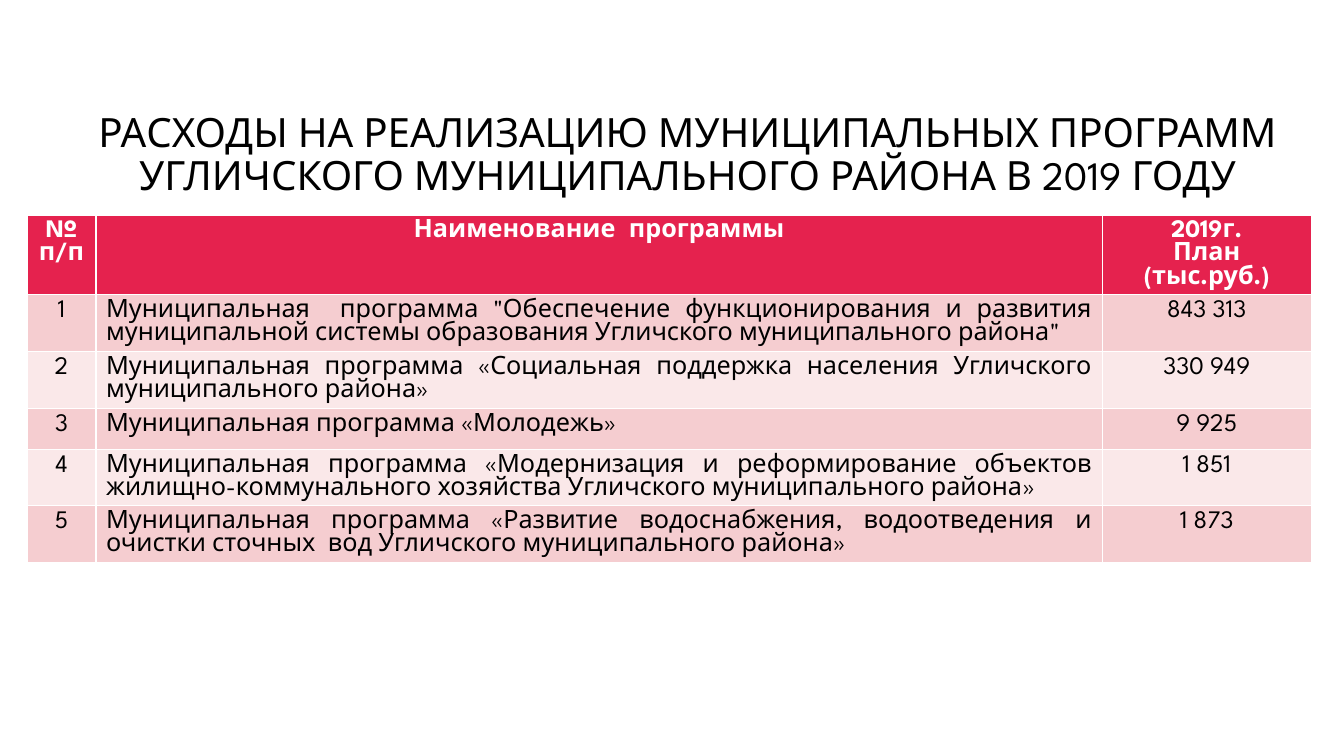
import pptx
import pptx.util
import pptx.dml.color
import pptx.enum.text

ALIGN = pptx.enum.text.PP_ALIGN
ANCHOR = pptx.enum.text.MSO_ANCHOR
COLORS = {"black": "000000", "white": "FFFFFF", "header": "E5224E",
          "odd": "F5CDD0", "even": "FAE8E9"}
HEADER = ["№ п/п", "Наименование  программы", "2019г.\nПлан\n(тыс.руб.)"]
PROGRAMS = [
    ('Муниципальная  программа "Обеспечение функционирования и развития '
     'муниципальной системы образования Угличского муниципального района"', "843 313"),
    ("Муниципальная программа «Социальная поддержка населения Угличского "
     "муниципального района»", "330 949"),
    ("Муниципальная программа «Молодежь»", "9 925"),
    ("Муниципальная программа «Модернизация и реформирование объектов "
     "жилищно-коммунального хозяйства Угличского муниципального района»", "1 851"),
    ("Муниципальная программа «Развитие водоснабжения, водоотведения и "
     "очистки сточных  вод Угличского муниципального района»", "1 873"),
]


def px(n):
    return pptx.util.Emu(round(n * 914400 / 100.8))


def rgb(name):
    return pptx.dml.color.RGBColor.from_string(COLORS[name])


def write(tf, text, size=18, color="black", bold=False, align=ALIGN.CENTER,
          spacing=None, font="League Spartan"):
    for i, line in enumerate(text.split("\n")):
        p = tf.add_paragraph() if i else tf.paragraphs[0]
        p.alignment = align
        p.line_spacing = spacing
        r = p.add_run()
        r.text = line
        r.font.name = font
        r.font.size = pptx.util.Pt(size)
        r.font.bold = bold
        r.font.color.rgb = rgb(color)


class Deck:
    def __init__(self):
        self.prs = pptx.Presentation()
        self.prs.slide_width = pptx.util.Inches(13.33)
        self.prs.slide_height = pptx.util.Inches(7.5)
        self.s = self.prs.slides.add_slide(self.prs.slide_layouts[5])

    def title(self, text, x, y, w, h, **style):
        sp = self.s.shapes.title
        sp.left, sp.top, sp.width, sp.height = px(x), px(y), px(w), px(h)
        tf = sp.text_frame
        tf.word_wrap = True
        tf.auto_size = pptx.enum.text.MSO_AUTO_SIZE.NONE
        tf.vertical_anchor = ANCHOR.MIDDLE
        write(tf, text, **style)

    def table(self, rows, x, y, widths, heights):
        tbl = self.s.shapes.add_table(len(rows), len(widths), px(x), px(y),
                                      px(sum(widths)), px(sum(heights))).table
        for col, w in zip(tbl.columns, widths):
            col.width = px(w)
        for i, (row, h) in enumerate(zip(rows, heights)):
            tbl.rows[i].height = px(h)
            fill = "header" if i == 0 else "odd" if i % 2 else "even"
            for j, text in enumerate(row):
                cell = tbl.cell(i, j)
                cell.fill.solid()
                cell.fill.fore_color.rgb = rgb(fill)
                write(cell.text_frame, text, bold=i == 0,
                      color="black" if i else "white",
                      align=ALIGN.JUSTIFY if i and j == 1 else ALIGN.CENTER)


def main():
    deck = Deck()
    # Title
    deck.title("РАСХОДЫ НА РЕАЛИЗАЦИЮ МУНИЦИПАЛЬНЫХ ПРОГРАММ "
               "УГЛИЧСКОГО МУНИЦИПАЛЬНОГО РАЙОНА В 2019 ГОДУ",
               77, 85, 1221, 142, size=28.8, spacing=0.9)
    # Programme costs
    rows = [HEADER] + [(str(n), *program) for n, program in enumerate(PROGRAMS, 1)]
    deck.table(rows, 27, 215, [69, 1006, 209], [79, 57, 56, 41, 56, 56])
    deck.prs.save("out.pptx")


if __name__ == "__main__":
    main()
